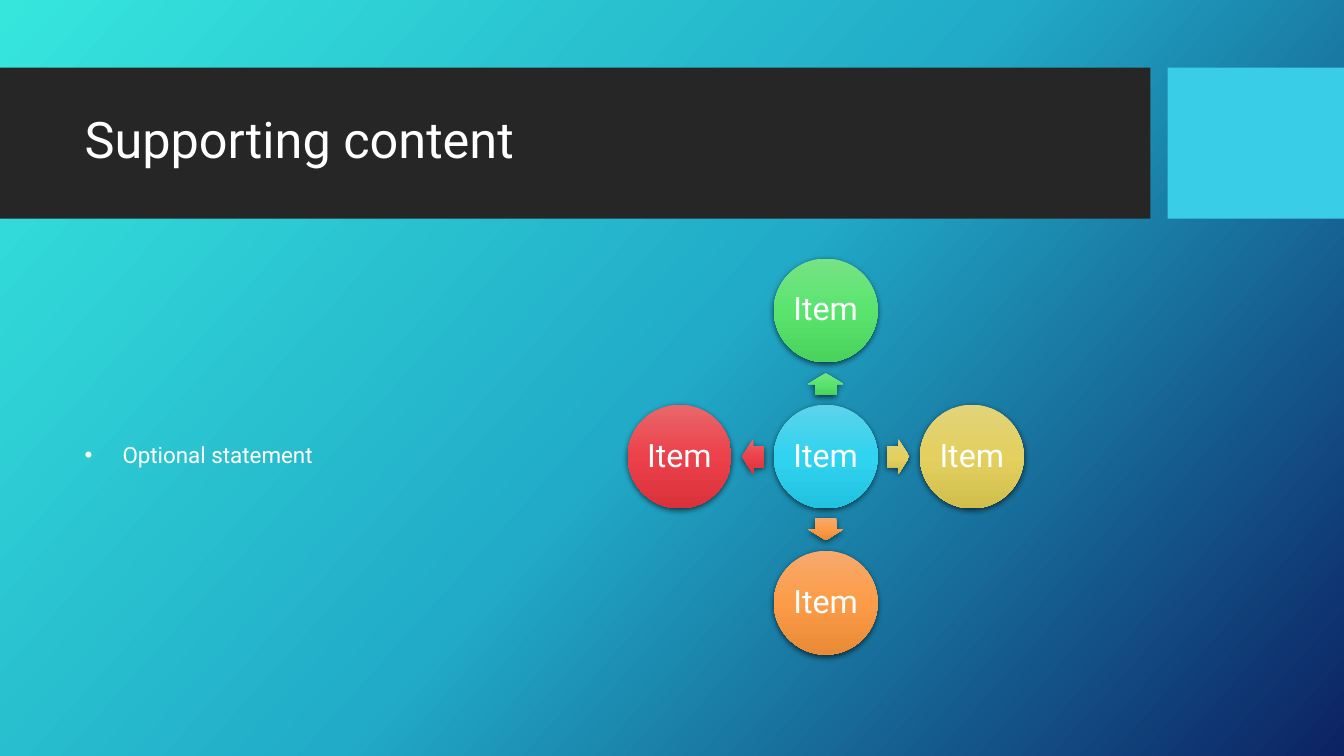
from lxml import etree
from pptx import Presentation
from pptx import util as u
from pptx.dml.color import RGBColor
from pptx.enum import shapes, text
from pptx.oxml.ns import qn

COLORS = {"white": "FFFFFF", "band": "262626", "accent": "39CDE7", "shadow": "000000"}
GRADIENTS = {
    "background": ("36E6DD", "21ABC8", "0C2263"),
    "cyan": ("5DD3EB", "30D3F0", "21C2DF"),
    "green": ("77E385", "5AE46E", "49D25C"),
    "yellow": ("E2D37A", "E3D05E", "D1BE4D"),
    "orange": ("F7A96C", "FC9C48", "E98B36"),
    "red": ("E9676C", "EC414A", "DA313A"),
}
CENTER_X, CENTER_Y = 8.19, 4.53
CIRCLE, ARROW_W, ARROW_H = 1.03, 0.22, 0.35
CIRCLE_REACH, ARROW_REACH = 1.45, 0.72
SPOKES = [
    ("green", 0, -1, 270),
    ("yellow", 1, 0, 0),
    ("orange", 0, 1, 90),
    ("red", -1, 0, 180),
]


class Deck:
    """Holds the style and the current slide, and draws each kind of element."""

    font = "Roboto"

    def __init__(self, prs):
        self.slide = prs.slides.add_slide(prs.slide_layouts[1])

    def gradient(self, owner, fill, name, angle):
        fill.gradient()
        fill.gradient_angle = 360 - angle
        grad = owner.xpath(".//a:gradFill")[0]
        grad.set("rotWithShape", "0")
        stops = grad.find(qn("a:gsLst"))
        for stop in list(stops):
            stops.remove(stop)
        for i, color in enumerate(GRADIENTS[name]):
            gs = etree.SubElement(stops, qn("a:gs"), pos=str(i * 50000))
            etree.SubElement(gs, qn("a:srgbClr"), val=color)

    def background(self, name, angle):
        self.gradient(self.slide._element, self.slide.background.fill, name, angle)

    def shape(self, kind, x, y, w, h):
        sp = self.slide.shapes.add_shape(
            kind, u.Inches(x), u.Inches(y), u.Inches(w), u.Inches(h))
        sp.shadow.inherit = False
        sp.line.fill.background()
        return sp

    def bar(self, x, w, color):
        sp = self.shape(shapes.MSO_SHAPE.RECTANGLE, x, 0.67, w, 1.5)
        sp.fill.solid()
        sp.fill.fore_color.rgb = RGBColor.from_string(COLORS[color])

    def glossy(self, kind, cx, cy, w, h, color):
        sp = self.shape(kind, cx - w / 2, cy - h / 2, w, h)
        self.gradient(sp._element, sp.fill, color, 90)
        effects = sp._element.xpath(".//a:effectLst")[0]
        shadow = etree.SubElement(
            effects, qn("a:outerShdw"), blurRad=str(u.Pt(4.5)),
            dist=str(u.Pt(1.5)), dir="5400000", rotWithShape="0")
        tint = etree.SubElement(shadow, qn("a:srgbClr"), val=COLORS["shadow"])
        etree.SubElement(tint, qn("a:alpha"), val="63000")
        return sp

    def label(self, tf, words, size, align):
        tf.text = words
        tf.vertical_anchor = text.MSO_ANCHOR.MIDDLE
        p = tf.paragraphs[0]
        p.alignment = align
        p.line_spacing = 0.9
        p.space_before = u.Pt(0)
        r = p.runs[0]
        r.font.name = self.font
        r.font.size = u.Pt(size)
        r.font.color.rgb = RGBColor.from_string(COLORS["white"])

    def circle(self, cx, cy, color, words):
        sp = self.glossy(shapes.MSO_SHAPE.OVAL, cx, cy, CIRCLE, CIRCLE, color)
        tf = sp.text_frame
        tf.margin_left = tf.margin_right = u.Inches(0.03)
        tf.margin_top = tf.margin_bottom = u.Inches(0.03)
        self.label(tf, words, 23, text.PP_ALIGN.CENTER)

    def arrow(self, cx, cy, color, rotation):
        sp = self.glossy(shapes.MSO_SHAPE.RIGHT_ARROW, cx, cy, ARROW_W, ARROW_H, color)
        sp.adjustments[0], sp.adjustments[1] = 0.6, 0.5
        sp.rotation = rotation

    def placeholder(self, index, x, y, w, h, words, size):
        sp = self.slide.placeholders[index]
        sp.left, sp.top, sp.width, sp.height = map(u.Inches, (x, y, w, h))
        self.slide.shapes._spTree.append(sp._element)
        p_pr = sp.text_frame.paragraphs[0]._p.get_or_add_pPr()
        p_pr.set("marL", "0")
        p_pr.set("indent", "0")
        etree.SubElement(p_pr, qn("a:buNone"))
        self.label(sp.text_frame, words, size, text.PP_ALIGN.LEFT)


def main():
    prs = Presentation()
    prs.slide_width, prs.slide_height = u.Inches(13.33), u.Inches(7.5)
    deck = Deck(prs)
    deck.background("background", 42)
    deck.bar(0, 11.41, "band")
    deck.bar(11.58, 1.75, "accent")
    deck.placeholder(0, 0.74, 0.82, 10.51, 1.18, "Supporting content", 36)
    deck.circle(CENTER_X, CENTER_Y, "cyan", "Item")
    for color, dx, dy, rotation in SPOKES:
        deck.arrow(CENTER_X + dx * ARROW_REACH, CENTER_Y + dy * ARROW_REACH, color, rotation)
        deck.circle(CENTER_X + dx * CIRCLE_REACH, CENTER_Y + dy * CIRCLE_REACH, color, "Item")
    deck.placeholder(1, 0.74, 2.56, 4.14, 3.94, "Optional statement", 16)
    prs.save("out.pptx")


if __name__ == "__main__":
    main()
